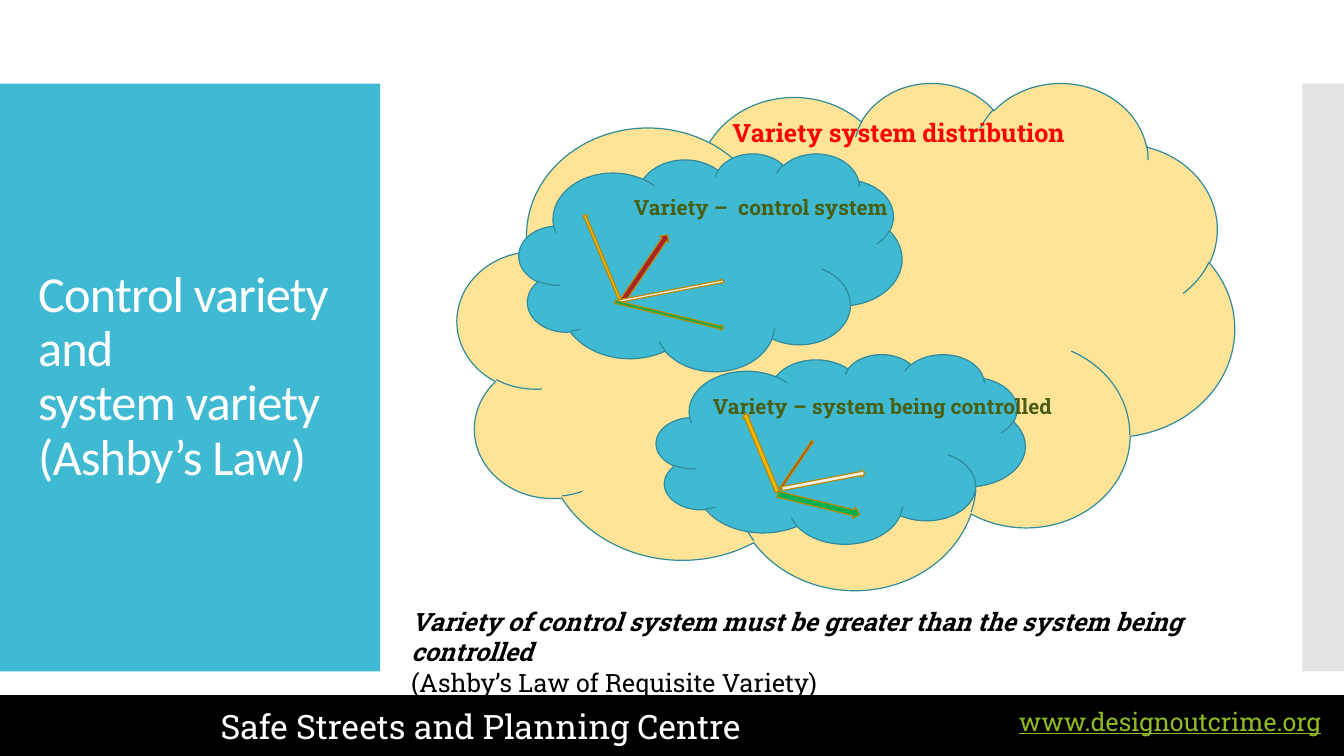
from dataclasses import dataclass
from typing import NamedTuple

from lxml.etree import SubElement
from pptx import Presentation
from pptx.dml.color import RGBColor
from pptx.enum.shapes import MSO_SHAPE as Preset
from pptx.enum.text import MSO_ANCHOR as Anchor
from pptx.oxml.ns import qn
from pptx.util import Cm, Pt


@dataclass(frozen=True)
class Theme:
    teal: str = "40BAD2"
    teal_line: str = "2F8A9B"
    sand: str = "FFE497"
    grey: str = "C8C8C8"
    black: str = "000000"
    white: str = "FFFFFF"
    link: str = "90BB23"
    label: str = "485E12"
    heading: str = "FF0000"
    arrow_line: str = "B98900"
    yellow: str = "FAB900"
    red: str = "A72327"
    pale: str = "F2F2F2"
    green: str = "00B050"
    title_font: str = "Calibri"
    body_font: str = "Roboto Slab"
    title_size: float = 36
    footer_size: float = 24
    body_size: float = 18
    label_size: float = 15
    line_width: float = 0.85


class Box(NamedTuple):
    left: float
    top: float
    width: float
    height: float

    def inner(self, left, top, width, height):
        return Box(self.left + left, self.top + top, width, height)

    def lengths(self):
        return [Cm(value) for value in self]


THEME = Theme()
ARROW_STYLES = (
    (THEME.yellow, 337.4),
    (THEME.red, 34.2),
    (THEME.pale, 79.2),
    (THEME.green, 103.7),
)


def add_shape(slide, preset, box, fill, line=None, rotation=0, opacity=None):
    shape = slide.shapes.add_shape(preset, *box.lengths())
    shape.shadow.inherit = False
    shape.rotation = rotation
    shape.fill.solid()
    shape.fill.fore_color.rgb = RGBColor.from_string(fill)
    if line:
        shape.line.color.rgb = RGBColor.from_string(line)
        shape.line.width = Pt(THEME.line_width)
    else:
        shape.line.fill.background()
    if opacity is not None:
        color = shape.fill._xPr.find(qn("a:solidFill")).find(qn("a:srgbClr"))
        SubElement(color, qn("a:alpha")).set("val", str(opacity * 1000))


def add_frame(slide, box, anchor=Anchor.TOP, wrap=False):
    frame = slide.shapes.add_textbox(*box.lengths()).text_frame
    frame.word_wrap = wrap
    frame.vertical_anchor = anchor
    return frame


def write(paragraph, text, *, size, color, font=THEME.body_font, bold=False,
          italic=False, underline=False, line_spacing=None, tracking=None):
    paragraph.text = text
    paragraph.line_spacing = line_spacing
    for run in paragraph.runs:
        run.font.name = font
        run.font.size = Pt(size)
        run.font.color.rgb = RGBColor.from_string(color)
        run.font.bold = bold
        run.font.italic = italic
        run.font.underline = underline
        if tracking is not None:
            run._r.get_or_add_rPr().set("spc", str(round(tracking * 100)))


def add_title_panel(slide, box):
    add_shape(slide, Preset.RECTANGLE, box, THEME.teal)
    frame = add_frame(slide, box.inner(0.71, 1.01, 8.18, 12.78), Anchor.MIDDLE, True)
    write(frame.paragraphs[0], "Control variety\vand\vsystem variety\v(Ashby’s Law)",
          size=THEME.title_size, color=THEME.white, font=THEME.title_font,
          line_spacing=0.9, tracking=-0.6)


def add_footer(slide, box):
    add_shape(slide, Preset.RECTANGLE, box, THEME.black, THEME.black)
    name = add_frame(slide, box.inner(5.41, 0, 15.29, box.height), Anchor.MIDDLE, True)
    write(name.paragraphs[0], "Safe Streets and Planning Centre",
          size=THEME.footer_size, color=THEME.white)
    address = add_frame(slide, box.inner(25.53, 0.2, 8.33, 0.89), Anchor.MIDDLE)
    write(address.paragraphs[0], "www.designoutcrime.org",
          size=THEME.body_size, color=THEME.link, underline=True)


def add_variety_cloud(slide, box, label, label_box, arrow_boxes):
    add_shape(slide, Preset.CLOUD, box, THEME.teal, THEME.teal_line)
    frame = add_frame(slide, box.inner(*label_box))
    write(frame.paragraphs[0], label, size=THEME.label_size, color=THEME.label, bold=True)
    for arrow_box, (fill, rotation) in zip(arrow_boxes, ARROW_STYLES):
        add_shape(slide, Preset.UP_ARROW, box.inner(*arrow_box), fill,
                  THEME.arrow_line, rotation)


def add_distribution(slide, box):
    add_shape(slide, Preset.CLOUD, box, THEME.sand, THEME.teal_line)
    add_variety_cloud(
        slide, box.inner(5.01, 6.86, 9.3, 4.78),
        "Variety – system being controlled", (1.17, 0.86, 9.25, 0.89),
        ((2.54, 1.42, 0.2, 2.13), (3.48, 2.06, 0.1, 1.47),
         (4.11, 2.13, 0.2, 2.13), (3.94, 2.72, 0.3, 2.13)))
    add_variety_cloud(
        slide, box.inner(1.55, 1.8, 9.65, 5.49),
        "Variety –  control system", (2.64, 0.91, 6.93, 0.89),
        ((2.03, 1.45, 0.13, 2.34), (3.02, 1.88, 0.28, 2.06),
         (3.78, 2.13, 0.13, 2.69), (3.71, 2.67, 0.15, 2.82)))
    frame = add_frame(slide, box.inner(6.68, 0.78, 9.09, 1.02))
    write(frame.paragraphs[0], "Variety system distribution",
          size=THEME.body_size, color=THEME.heading, bold=True)


def add_statement(slide, box):
    frame = add_frame(slide, box)
    write(frame.paragraphs[0],
          "Variety of control system must be greater than the system being controlled",
          size=THEME.body_size, color=THEME.black, bold=True, italic=True)
    write(frame.add_paragraph(), "(Ashby’s Law of Requisite Variety)",
          size=THEME.body_size, color=THEME.black)


def main():
    presentation = Presentation()
    presentation.slide_width = Cm(33.87)
    presentation.slide_height = Cm(19.05)
    slide = presentation.slides.add_slide(presentation.slide_layouts[6])
    add_shape(slide, Preset.RECTANGLE, Box(32.82, 2.11, 1.05, 14.81),
              THEME.grey, opacity=50)
    add_footer(slide, Box(-0.1, 17.53, 33.97, 1.52))
    add_title_panel(slide, Box(0, 2.11, 9.58, 14.81))
    add_distribution(slide, Box(11.53, 2.06, 19.58, 12.78))
    add_statement(slide, Box(10.11, 15.16, 23.16, 1.8))
    presentation.save("out.pptx")


if __name__ == "__main__":
    main()
